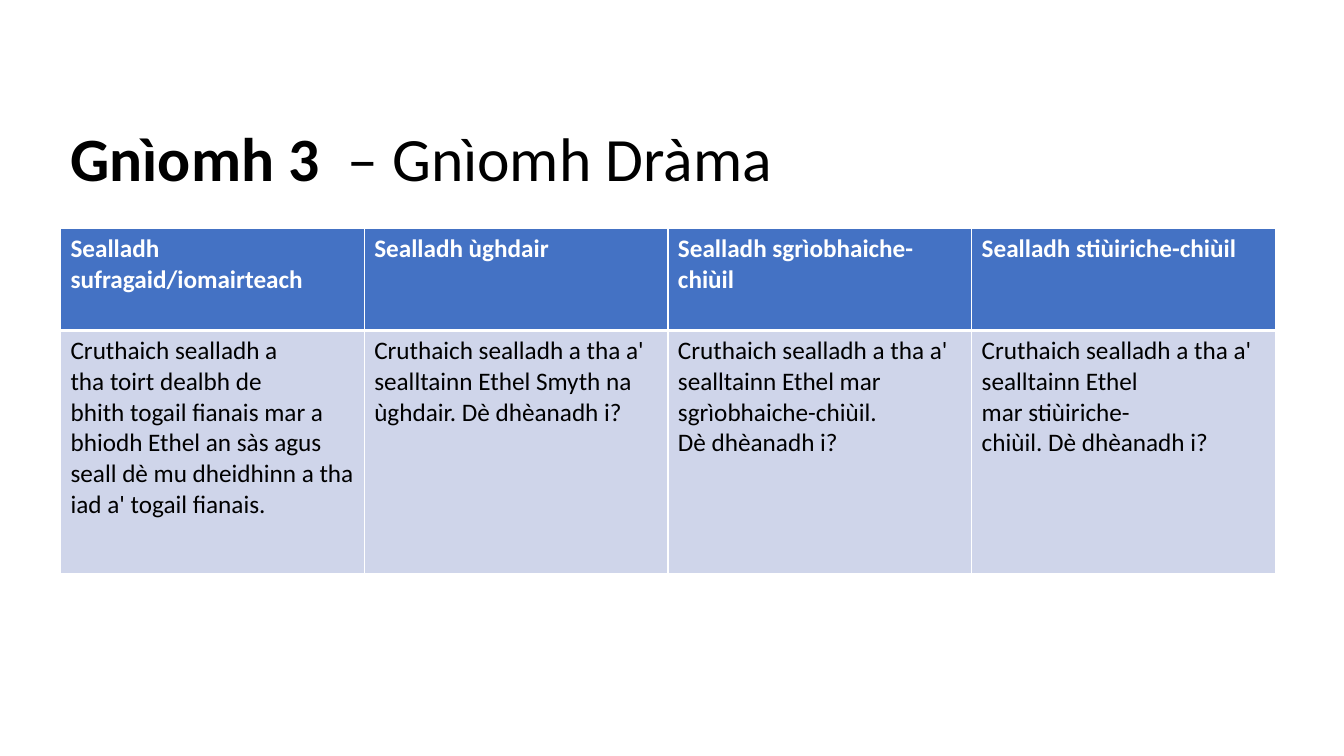
import pptx
import pptx.util
import pptx.dml.color
import pptx.enum.text
import pptx.oxml
import pptx.oxml.ns

Inches, Pt = pptx.util.Inches, pptx.util.Pt
RGBColor = pptx.dml.color.RGBColor

# "~" stands for a no-break space
TITLE = [("Gnìomh 3~ ", True), ("– Gnìomh Dràma", False)]
SCENES = [
    ("Sealladh sufragaid/iomairteach",
     "Cruthaich~sealladh~a tha~toirt dealbh de bhith~togail fianais mar a bhiodh "
     "Ethel an sàs agus seall dè mu dheidhinn a tha iad a' togail fianais.~"),
    ("Sealladh ùghdair",
     "Cruthaich sealladh a tha a' sealltainn Ethel Smyth na ùghdair. Dè dhèanadh~i?~"),
    ("Sealladh sgrìobhaiche-chiùil",
     "Cruthaich sealladh a tha a' sealltainn~Ethel mar sgrìobhaiche-chiùil. "
     "Dè~dhèanadh~i?~"),
    ("Sealladh stiùiriche-chiùil",
     "Cruthaich~sealladh~a~tha~a'~sealltainn~Ethel mar~stiùiriche-chiùil.~"
     "Dè~dhèanadh~i?~"),
]

FONT = "Calibri"
BLACK = RGBColor(0x00, 0x00, 0x00)
WHITE = RGBColor(0xFF, 0xFF, 0xFF)
BLUE = RGBColor(0x44, 0x72, 0xC4)
PALE_BLUE = RGBColor(0xCF, 0xD5, 0xEA)
ROWS = [  # height, fill, text colour, bold, bottom border
    (1.01, BLUE, WHITE, True, 3),
    (2.41, PALE_BLUE, BLACK, False, 1),
]
LEFT, TABLE_TOP, TABLE_WIDTH = 0.6, 2.27, 12.05


def with_hard_spaces(text):
    return text.replace("~", chr(160))


def set_font(font, size, color):
    font.name, font.size = FONT, Pt(size)
    font.color.rgb = color


def set_bottom_border(cell, points):
    line = pptx.oxml.parse_xml(
        f'<a:lnB {pptx.oxml.ns.nsdecls("a")} w="{Pt(points)}"><a:solidFill>'
        f'<a:srgbClr val="{WHITE}"/></a:solidFill></a:lnB>')
    cell._tc.get_or_add_tcPr().insert(0, line)


def add_title(slide):
    title = slide.shapes.title
    title.left, title.top = Inches(LEFT), Inches(1.14)
    title.width, title.height = Inches(10.39), Inches(0.84)
    tf = title.text_frame
    tf.word_wrap = True
    tf.auto_size = pptx.enum.text.MSO_AUTO_SIZE.SHAPE_TO_FIT_TEXT
    p = tf.paragraphs[0]
    p.alignment = pptx.enum.text.PP_ALIGN.LEFT
    set_font(p.font, 44, BLACK)
    for text, bold in TITLE:
        r = p.add_run()
        r.text, r.font.bold = with_hard_spaces(text), bold


def add_scene_table(slide):
    height = sum(row[0] for row in ROWS)
    table = slide.shapes.add_table(
        len(ROWS), len(SCENES), Inches(LEFT), Inches(TABLE_TOP),
        Inches(TABLE_WIDTH), Inches(height)).table
    for i, (row_height, fill, color, bold, border) in enumerate(ROWS):
        table.rows[i].height = Inches(row_height)
        for j, scene in enumerate(SCENES):
            cell = table.cell(i, j)
            cell.fill.solid()
            cell.fill.fore_color.rgb = fill
            set_bottom_border(cell, border)
            cell.text = with_hard_spaces(scene[i])
            p = cell.text_frame.paragraphs[0]
            set_font(p.font, 18, color)
            p.font.bold = bold


def main():
    prs = pptx.Presentation()
    prs.slide_width, prs.slide_height = Inches(13.33), Inches(7.5)
    slide = prs.slides.add_slide(prs.slide_layouts[5])
    add_scene_table(slide)
    add_title(slide)
    prs.save("out.pptx")


if __name__ == "__main__":
    main()
